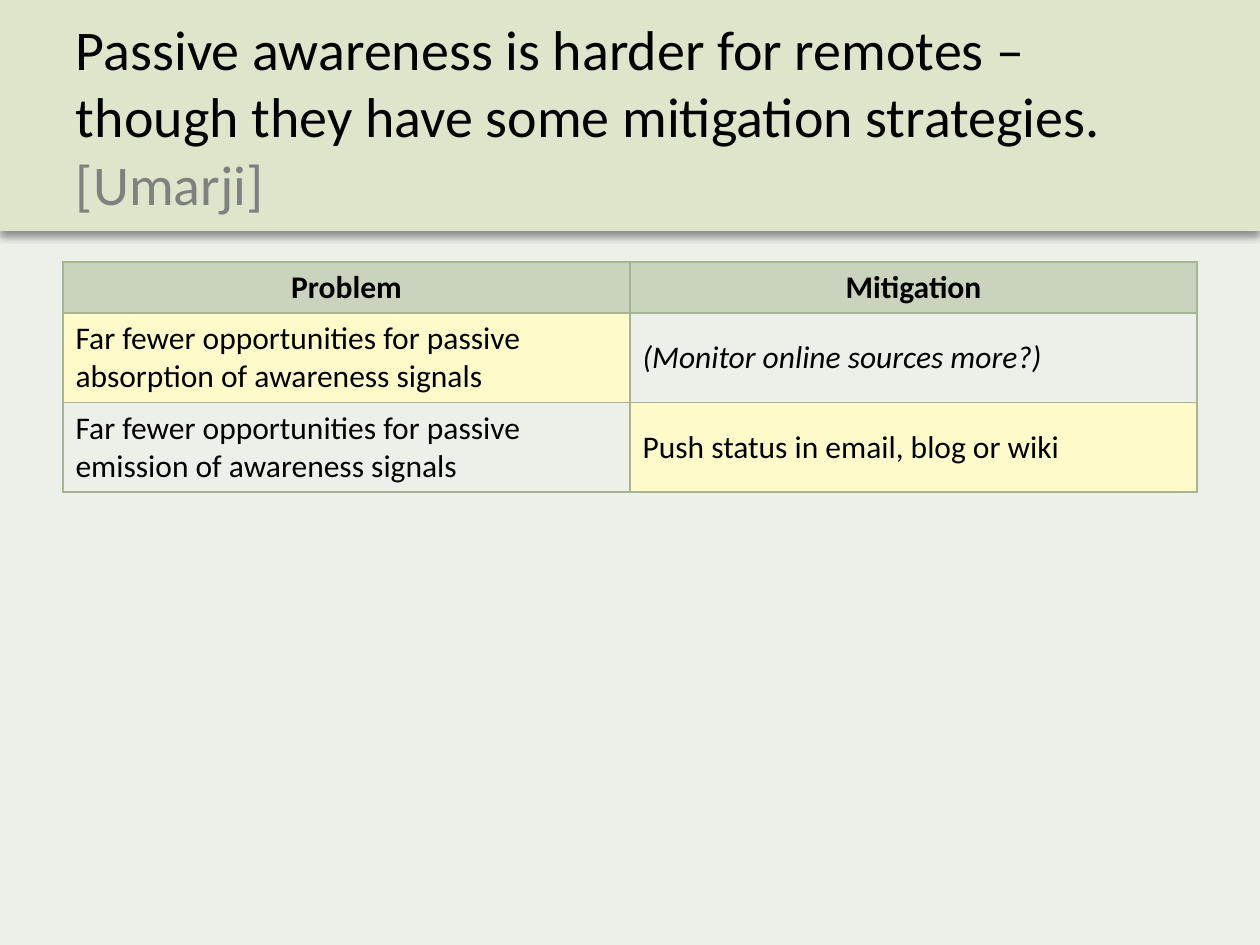
from lxml import etree
from pptx import Presentation
from pptx.dml.color import RGBColor
from pptx.enum.text import MSO_ANCHOR, MSO_AUTO_SIZE, PP_ALIGN
from pptx.oxml import parse_xml
from pptx.oxml.ns import nsdecls, qn
from pptx.util import Pt

MIDDLE = MSO_ANCHOR.MIDDLE
LEFT, CENTER = PP_ALIGN.LEFT, PP_ALIGN.CENTER
NO_FIT = MSO_AUTO_SIZE.NONE

SCALE = 914400 / 126
FONT = "Calibri"
BLACK, GRAY = "000000", "808080"
PAGE, BAND = "EDF0E9", "DFE5CA"
HEAD, MARK, EDGE = "C9D3BE", "FEFAC9", "A5B592"

# Each cell: text, fill, style
ROWS = [
    [("Problem", HEAD, "bold"), ("Mitigation", HEAD, "bold")],
    [("Far fewer opportunities for passive absorption of awareness signals",
      MARK, ""),
     ("(Monitor online sources more?)", None, "italic")],
    [("Far fewer opportunities for passive emission of awareness signals",
      None, ""),
     ("Push status in email, blog or wiki", MARK, "")],
]


def px(n):
    return round(n * SCALE)


def paint(fill, tone):
    if tone is None:
        fill.background()
    else:
        fill.solid()
        fill.fore_color.rgb = RGBColor.from_string(tone)


def add_run(para, text, size, tone=BLACK, style=""):
    run = para.add_run()
    run.text = text
    font = run.font
    font.name, font.size = FONT, Pt(size)
    font.bold, font.italic = style == "bold", style == "italic"
    font.color.rgb = RGBColor.from_string(tone)


def add_shadow(shape):
    shape._element.spPr.append(parse_xml(
        f'<a:effectLst {nsdecls("a")}>'
        f'<a:outerShdw blurRad="{Pt(4)}" dist="{Pt(3)}" dir="5400000" '
        f'rotWithShape="0"><a:srgbClr val="{BLACK}">'
        '<a:alpha val="40000"/></a:srgbClr></a:outerShdw></a:effectLst>'))


def set_edges(cell):
    props = cell._tc.get_or_add_tcPr()
    for side in ("a:lnL", "a:lnR", "a:lnT", "a:lnB"):
        line = etree.SubElement(props, qn(side), w=str(Pt(1)))
        solid = etree.SubElement(line, qn("a:solidFill"))
        etree.SubElement(solid, qn("a:srgbClr"), val=EDGE)


def fill_title(slide, x, y, w, h):
    title = slide.shapes.title
    title.left, title.top, title.width, title.height = map(px, (x, y, w, h))
    paint(title.fill, BAND)
    title.line.fill.background()
    add_shadow(title)
    frame = title.text_frame
    frame.word_wrap, frame.auto_size = True, NO_FIT
    frame.vertical_anchor = MIDDLE
    frame.margin_left = frame.margin_right = px(76)
    frame.margin_top = frame.margin_bottom = px(13)
    para = frame.paragraphs[0]
    para.alignment = LEFT
    add_run(para, "Passive awareness is harder for remotes – though they have "
                  "some mitigation strategies. ", 32)
    add_run(para, "[Umarji]", 32, GRAY)


def add_grid(slide, x, y, w, h):
    shape = slide.shapes.add_table(
        len(ROWS), len(ROWS[0]), px(x), px(y), px(w), px(h))
    table = shape.table
    table.horz_banding = False
    for r, row in enumerate(ROWS):
        for c, (text, tone, style) in enumerate(row):
            cell = table.cell(r, c)
            set_edges(cell)
            paint(cell.fill, tone)
            cell.vertical_anchor = MIDDLE
            para = cell.text_frame.paragraphs[0]
            para.alignment = LEFT if r else CENTER
            add_run(para, text, 18, style=style)


def main():
    deck = Presentation()
    deck.slide_width, deck.slide_height = px(1260), px(945)
    slide = deck.slides.add_slide(deck.slide_layouts[5])
    paint(slide.background.fill, PAGE)
    fill_title(slide, 0, 0, 1260, 231)
    add_grid(slide, 63, 262, 1134, 114)
    deck.save("out.pptx")


if __name__ == "__main__":
    main()
